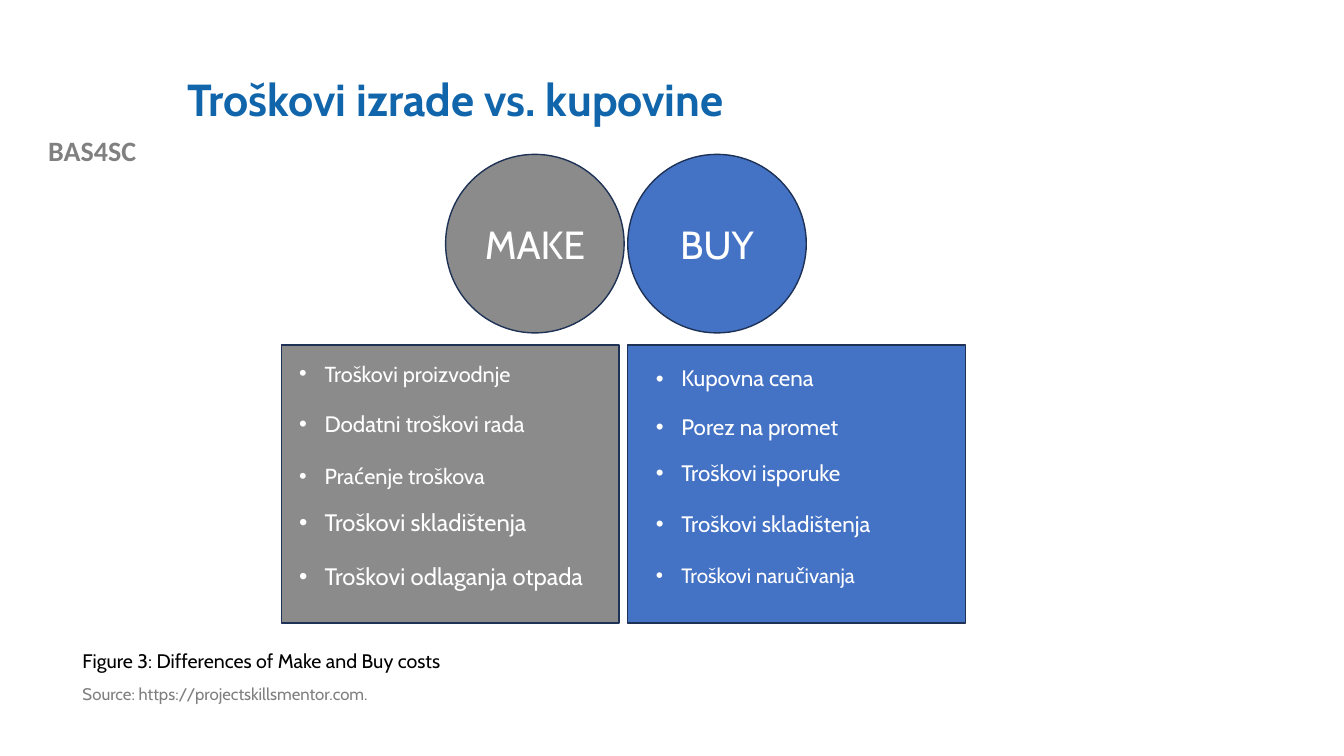
from lxml import etree
from pptx import Presentation
from pptx import util as u
from pptx.dml.color import RGBColor
from pptx.enum import shapes, text
from pptx.oxml.ns import qn

HUES = {"blue": "4472C4", "gray": "8B8B8B", "edge": "1E3256", "head": "1065AB",
        "mark": "808080", "note": "7F7F7F", "white": "FFFFFF", "black": "000000"}
SIDES = [
    ("MAKE", "gray", 11.23, 7.09, 7.29, [
        ("Troškovi proizvodnje", 9.14, 6.5, 15.5, 0.7),
        ("Dodatni troškovi rada", 10.29, 7.26, 16, 0.9),
        ("Praćenje troškova", 11.73, 5.54, 15.5, 0.7),
        ("Troškovi skladištenja", 12.75, 7.59, 17, 0.9),
        ("Troškovi odlaganja otpada", 14.12, 8.28, 17, 0.9)]),
    ("BUY", "blue", 15.82, 15.82, 16.28, [
        ("Kupovna cena", 9.14, 5.54, 16, 0.9),
        ("Porez na promet", 10.36, 5.54, 16, 0.9),
        ("Troškovi isporuke", 11.51, 5.54, 16, 0.9),
        ("Troškovi skladištenja", 12.8, 7.01, 16, 0.9),
        ("Troškovi naručivanja", 14.12, 6.15, 14.8, 0.9)]),
]


def tint(hue):
    """Return the named colour."""
    return RGBColor.from_string(HUES[hue])


def write(frame, words, size, hue, bold=False, face="Cabin", align="LEFT", gap=1.0):
    """Put one run of text in a frame and return its paragraph."""
    frame.word_wrap = True
    para = frame.paragraphs[0]
    para.alignment = getattr(text.PP_ALIGN, align)
    para.line_spacing = gap
    run = para.add_run()
    run.text = words
    font = run.font
    font.name, font.size, font.bold = face, u.Pt(size), bold
    font.color.rgb = tint(hue)
    return para


def label(slide, box, words, size, hue, **style):
    """Add a text box and return its paragraph."""
    area = slide.shapes.add_textbox(*map(u.Cm, box))
    return write(area.text_frame, words, size, hue, **style)


def bullet(para):
    """Give a paragraph a white round bullet with a hanging indent."""
    props = para._p.get_or_add_pPr()
    props.set("marL", str(u.Cm(0.64)))
    props.set("indent", str(-u.Cm(0.64)))
    shade = etree.SubElement(props, qn("a:buClr"))
    etree.SubElement(shade, qn("a:srgbClr"), val=HUES["white"])
    etree.SubElement(props, qn("a:buFont"), typeface="Arial")
    etree.SubElement(props, qn("a:buChar"), char="•")


def block(slide, kind, box, hue):
    """Add a filled and outlined shape."""
    form = slide.shapes.add_shape(kind, *map(u.Cm, box))
    form.shadow.inherit = False
    form.fill.solid()
    form.fill.fore_color.rgb = tint(hue)
    form.line.color.rgb = tint("edge")
    form.line.width = u.Pt(1)
    return form


def side(slide, name, hue, ring, left, inset, items):
    """Draw one option: its circle, its panel and its list of costs."""
    disc = block(slide, shapes.MSO_SHAPE.OVAL, (ring, 3.89, 4.5, 4.5), hue)
    disc.text_frame.vertical_anchor = text.MSO_ANCHOR.MIDDLE
    write(disc.text_frame, name, 28, "white", align="CENTER")
    block(slide, shapes.MSO_SHAPE.RECTANGLE, (left, 8.69, 8.51, 7.01), hue)
    for words, top, width, size, gap in items:
        bullet(label(slide, (inset, top, width, 1.22), words, size, "white",
                     align="JUSTIFY", gap=gap))


def heading(slide, words):
    """Place and format the slide title."""
    title = slide.shapes.title
    title.left, title.top, title.width, title.height = map(
        u.Cm, (4.47, 1.02, 27.08, 3.1))
    title.text_frame.vertical_anchor = text.MSO_ANCHOR.MIDDLE
    write(title.text_frame, words, 32, "head", bold=True, gap=0.9)


def main():
    """Build the slide and save it."""
    deck = Presentation()
    deck.slide_width, deck.slide_height = u.Cm(33.87), u.Cm(19.05)
    slide = deck.slides.add_slide(deck.slide_layouts[5])
    heading(slide, "Troškovi izrade vs. kupovine")
    label(slide, (0, 3.25, 4.65, 1.12), "BAS4SC", 20, "mark",
          bold=True, face="Calibri", align="CENTER")
    for option in SIDES:
        side(slide, *option)
    label(slide, (1.83, 16.23, 11.15, 0.86),
          "Figure 3: Differences of Make and Buy costs", 14, "black")
    label(slide, (1.83, 17.17, 12.73, 1.32),
          "Source: https://projectskillsmentor.com.", 12, "note", gap=0.9)
    deck.save("out.pptx")


if __name__ == "__main__":
    main()
